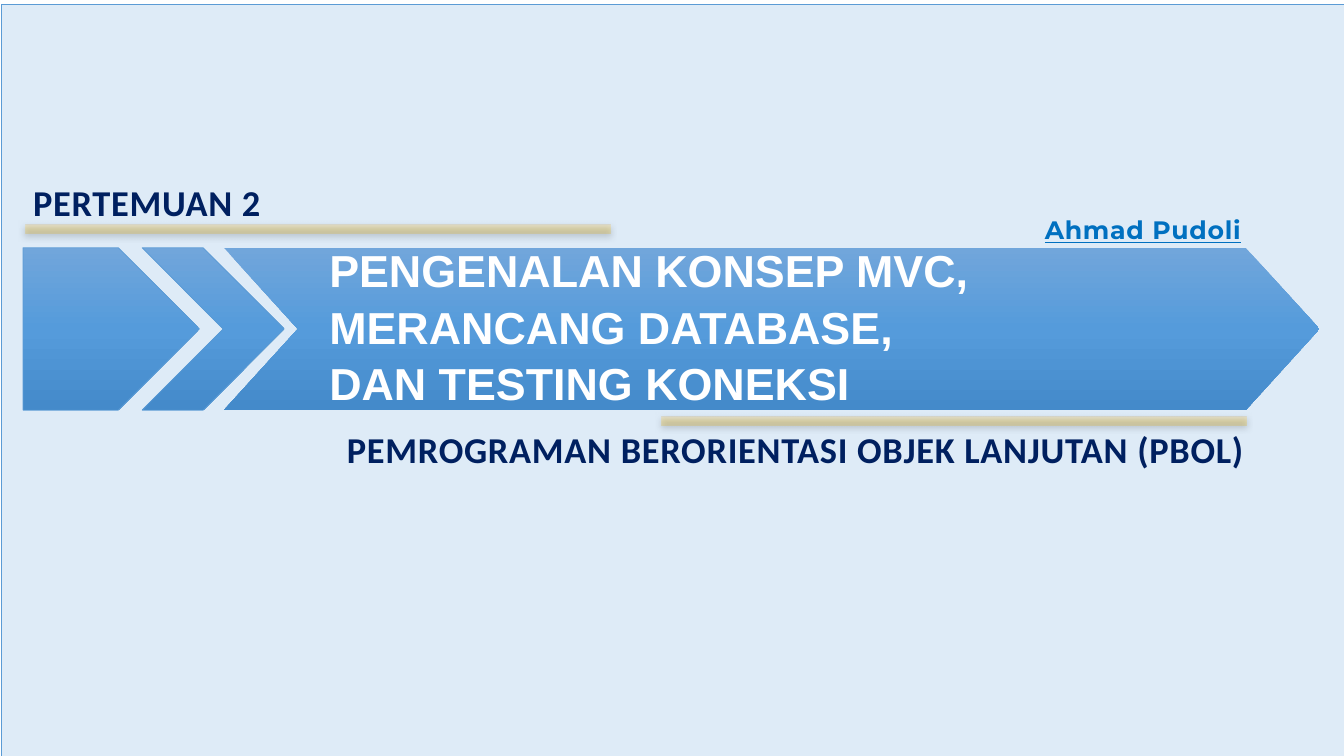
import dataclasses

import pptx
import pptx.dml.color
import pptx.enum.shapes
import pptx.enum.text
import pptx.oxml
import pptx.oxml.ns
import pptx.util
from lxml import etree

Pt = pptx.util.Pt
PRESET = pptx.enum.shapes.MSO_SHAPE
ALIGN = pptx.enum.text.PP_ALIGN
qn = pptx.oxml.ns.qn


@dataclasses.dataclass(frozen=True)
class Theme:
    backdrop: str = "DEEBF7"
    outline: str = "5B9BD5"
    navy: str = "002060"
    white: str = "FFFFFF"
    link_blue: str = "0070C0"
    shadow: str = "000000"
    blue_stops: tuple = ("71A6DB", "559BDB", "448ACA")
    gold_stops: tuple = ("FFC64B", "FFC000", "E3AB00")
    title_size: float = 32
    heading_size: float = 26
    author_size: float = 18
    line_width: float = 0.5
    letter_spacing: float = 0.5
    title_font: str = "Arial"
    heading_font: str = "Calibri"
    author_font: str = "Montserrat"


class SlideBuilder:
    def __init__(self, page, theme):
        self.page = page
        self.theme = theme

    def shape(self, preset, area, outlined=True, point=None):
        """Add an unfilled preset shape; point sets its first adjustment."""
        shape = self.page.shapes.add_shape(preset, *map(Pt, area))
        shape.shadow.inherit = False
        if point is not None:
            shape.adjustments[0] = point
        if outlined:
            shape.line.color.rgb = pptx.dml.color.RGBColor.from_string(self.theme.outline)
            shape.line.width = Pt(self.theme.line_width)
        else:
            shape.line.fill.background()
        return shape

    def backdrop(self, area):
        shape = self.shape(PRESET.RECTANGLE, area)
        shape.fill.solid()
        shape.fill.fore_color.rgb = pptx.dml.color.RGBColor.from_string(self.theme.backdrop)

    def gradient(self, shape, colours, opacity=100):
        """Fill from top to bottom with evenly spaced colours."""
        shape.fill.gradient()
        shape.fill.gradient_angle = 270
        stops = shape.element.spPr.find(".//" + qn("a:gsLst"))
        for stop in list(stops):
            stops.remove(stop)
        for index, colour in enumerate(colours):
            position = index * 100000 // (len(colours) - 1)
            stop = etree.SubElement(stops, qn("a:gs"), pos=str(position))
            value = etree.SubElement(stop, qn("a:srgbClr"), val=colour)
            if opacity < 100:
                etree.SubElement(value, qn("a:alpha"), val=str(opacity * 1000))

    def arrow(self, preset, area, **options):
        self.gradient(self.shape(preset, area, **options), self.theme.blue_stops)

    def gold_rule(self, area):
        rule = self.shape(PRESET.RECTANGLE, area, outlined=False)
        self.gradient(rule, self.theme.gold_stops, opacity=25)
        effects = rule.element.spPr.find(qn("a:effectLst"))
        shadow = etree.SubElement(
            effects, qn("a:outerShdw"), blurRad=str(Pt(4.5)), dist=str(Pt(1.5)),
            dir="5400000", algn="ctr", rotWithShape="0")
        colour = etree.SubElement(shadow, qn("a:srgbClr"), val=self.theme.shadow)
        etree.SubElement(colour, qn("a:alpha"), val="63000")

    def set_text(self, box, lines, font, size, colour, align=ALIGN.LEFT,
                 underline=None, leading=1.0):
        frame = box.text_frame
        frame.word_wrap = True
        frame.auto_size = pptx.enum.text.MSO_AUTO_SIZE.NONE
        frame.vertical_anchor = pptx.enum.text.MSO_ANCHOR.MIDDLE
        for index, line in enumerate(lines):
            para = frame.add_paragraph() if index else frame.paragraphs[0]
            para.alignment = align
            para.line_spacing = leading
            para.space_before = Pt(0)
            span = para.add_run()
            span.text = line
            span.font.name = font
            span.font.size = Pt(size)
            span.font.bold = True
            span.font.underline = underline
            span.font.color.rgb = pptx.dml.color.RGBColor.from_string(colour)

    def label(self, text, area, font, size, colour, **options):
        """Add one line of letter-spaced text."""
        box = self.page.shapes.add_textbox(*map(Pt, area))
        self.set_text(box, [text], font, size, colour, **options)
        for properties in box.element.iter(qn("a:rPr")):
            properties.set("spc", str(int(self.theme.letter_spacing * 100)))

    def title(self, lines, area):
        """Place the title placeholder in front of the shapes added so far."""
        box = self.page.shapes.title
        box.left, box.top, box.width, box.height = map(Pt, area)
        box.element.getparent().append(box.element)
        self.set_text(box, lines, self.theme.title_font, self.theme.title_size,
                      self.theme.white, leading=1.05)


def main():
    deck = pptx.Presentation()
    deck.slide_width, deck.slide_height = Pt(960), Pt(540)
    theme = Theme()
    builder = SlideBuilder(deck.slides.add_slide(deck.slide_layouts[5]), theme)

    builder.backdrop((0.75, 3, 960, 540))

    band_top, band_height = 177, 116
    builder.arrow(PRESET.PENTAGON, (16.5, band_top, 126, band_height))
    builder.arrow(PRESET.CHEVRON, (101.5, band_top, 101.5, band_height), point=0.57)
    builder.arrow(PRESET.CHEVRON, (160, band_top, 782.5, band_height),
                  outlined=False, point=0.455)

    heading = (theme.heading_font, theme.heading_size, theme.navy)
    builder.label("PERTEMUAN 2", (16.5, 131, 336, 26), *heading)
    for left, top in ((18, 160.5), (472.5, 297.5)):
        builder.gold_rule((left, top, 418, 6.5))
    builder.label("PEMROGRAMAN BERORIENTASI OBJEK LANJUTAN (PBOL)",
                  (143.5, 307.5, 753, 26), *heading, align=ALIGN.RIGHT)
    builder.title(["PENGENALAN KONSEP MVC, MERANCANG DATABASE,", "DAN TESTING KONEKSI"],
                  (228, 191, 679, 82))
    builder.label("Ahmad Pudoli", (642, 151, 251.5, 26), theme.author_font,
                  theme.author_size, theme.link_blue, align=ALIGN.RIGHT, underline=True)

    deck.save("out.pptx")


if __name__ == "__main__":
    main()
